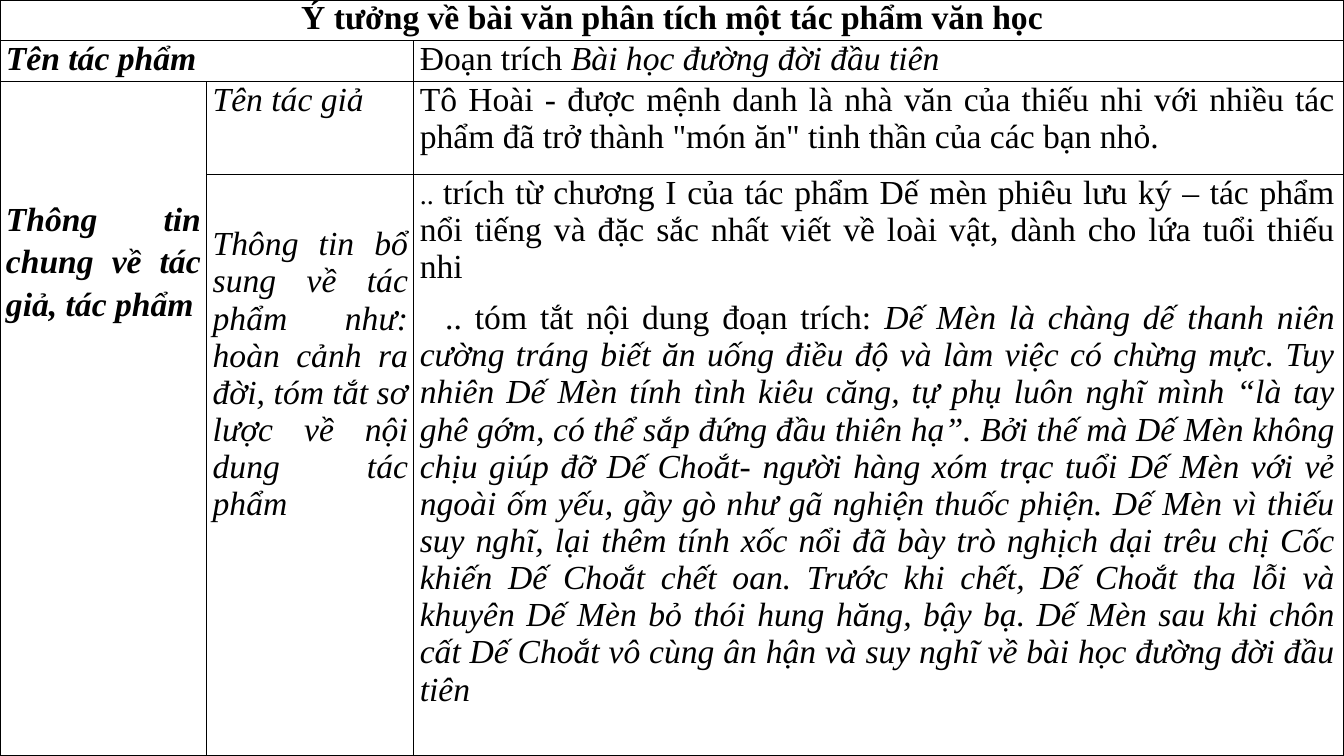
from dataclasses import dataclass

from lxml.etree import SubElement
from pptx import Presentation
from pptx.dml.color import RGBColor
from pptx.enum.text import PP_ALIGN as Align
from pptx.oxml.ns import qn
from pptx.util import Cm, Pt


@dataclass(frozen=True)
class Theme:
    """Colours, font and sizes of the slide."""
    ink: str = "000000"
    paper: str = "FFFFFF"
    font: str = "Times New Roman"
    body: int = 24
    small: int = 20
    gap: int = 10
    border: int = 1


THEME = Theme()
COLUMN_WIDTHS = (5.21, 5.22, 23.44)
ROW_HEIGHTS = (1.03, 1.03, 2.33, 14.66)
SIDE_MARGIN = 0.15
WIDE_MARGIN = 0.23

AUTHOR = ('Tô Hoài - được mệnh danh là nhà văn của thiếu nhi với nhiều tác phẩm '
          'đã trở thành "món ăn" tinh thần của các bạn nhỏ.')
EXTRA_INFO = ("Thông tin bổ sung về tác phẩm như: hoàn cảnh ra đời, "
              "tóm tắt sơ lược về nội dung tác phẩm")
ORIGIN = ("trích từ chương I của tác phẩm Dế mèn phiêu lưu ký – tác phẩm nổi tiếng "
          "và đặc sắc nhất viết về loài vật, dành cho lứa tuổi thiếu nhi")
SUMMARY = ("Dế Mèn là chàng dế thanh niên cường tráng biết ăn uống điều độ và làm việc "
           "có chừng mực. Tuy nhiên Dế Mèn tính tình kiêu căng, tự phụ luôn nghĩ mình "
           "“là tay ghê gớm, có thể sắp đứng đầu thiên hạ”. Bởi thế mà Dế Mèn không "
           "chịu giúp đỡ Dế Choắt- người hàng xóm trạc tuổi Dế Mèn với vẻ ngoài ốm yếu, "
           "gầy gò như gã nghiện thuốc phiện. Dế Mèn vì thiếu suy nghĩ, lại thêm tính "
           "xốc nổi đã bày trò nghịch dại trêu chị Cốc khiến Dế Choắt chết oan. Trước "
           "khi chết, Dế Choắt tha lỗi và khuyên Dế Mèn bỏ thói hung hăng, bậy bạ. "
           "Dế Mèn sau khi chôn cất Dế Choắt vô cùng ân hận và suy nghĩ về bài học "
           "đường đời đầu tiên")


def add_text(paragraph, text, bold=False, italic=False, size=THEME.body):
    """Append a formatted run to a paragraph."""
    run = paragraph.add_run()
    run.text = text
    font = run.font
    font.name, font.size = THEME.font, Pt(size)
    font.bold, font.italic = bold, italic
    font.color.rgb = RGBColor.from_string(THEME.ink)


def style_cell(cell):
    """Give a cell its margins, thin borders and plain fill."""
    cell.margin_left = cell.margin_right = Cm(SIDE_MARGIN)
    cell.margin_top = cell.margin_bottom = 0
    properties = cell._tc.get_or_add_tcPr()
    for side in ("a:lnL", "a:lnR", "a:lnT", "a:lnB"):
        line = SubElement(properties, qn(side), w=str(Pt(THEME.border)))
        solid = SubElement(line, qn("a:solidFill"))
        SubElement(solid, qn("a:srgbClr"), val=THEME.ink)
    cell.fill.solid()
    cell.fill.fore_color.rgb = RGBColor.from_string(THEME.paper)


def fill_cell(cell, *paragraphs, align=Align.JUSTIFY, spacing=None, top=0,
              right=SIDE_MARGIN, indents=()):
    """Write paragraphs, each a list of (text, format) pairs, into a cell."""
    cell.margin_top, cell.margin_right = Cm(top), Cm(right)
    frame = cell.text_frame
    for index, runs in enumerate(paragraphs):
        paragraph = frame.add_paragraph() if index else frame.paragraphs[0]
        paragraph.alignment = align
        paragraph.space_after = Pt(THEME.gap)
        if spacing:
            paragraph.line_spacing = spacing
        if index < len(indents):
            paragraph._p.get_or_add_pPr().set("indent", str(Cm(indents[index])))
        for text, style in runs:
            add_text(paragraph, text, **style)


def add_idea_table(slide, left, top, width, height):
    """Place the table of ideas in the given box."""
    frame = slide.shapes.add_table(len(ROW_HEIGHTS), len(COLUMN_WIDTHS),
                                   left, top, width, height)
    table = frame.table
    table.first_row = table.horz_banding = False
    for column, size in zip(table.columns, COLUMN_WIDTHS):
        column.width = Cm(size)
    for row, size in zip(table.rows, ROW_HEIGHTS):
        row.height = Cm(size)
    for cell in table.iter_cells():
        style_cell(cell)
    for first, last in (((0, 0), (0, 2)), ((1, 0), (1, 1)), ((2, 0), (3, 0))):
        table.cell(*first).merge(table.cell(*last))

    bold, italic = {"bold": True}, {"italic": True}
    heading = bold | italic
    fill_cell(table.cell(0, 0),
              [("Ý tưởng về bài văn phân tích một tác phẩm văn học", bold)],
              align=Align.CENTER)
    fill_cell(table.cell(1, 0), [("Tên tác phẩm", heading)])
    fill_cell(table.cell(1, 2),
              [("Đoạn trích ", {}), ("Bài học đường đời đầu tiên", italic)])
    fill_cell(table.cell(2, 0), [("Thông tin chung về tác giả, tác phẩm", heading)],
              spacing=1.15, top=2.87)
    fill_cell(table.cell(2, 1), [("Tên tác giả", italic)])
    fill_cell(table.cell(2, 2), [(AUTHOR, {})], right=WIDE_MARGIN)
    fill_cell(table.cell(3, 1), [(EXTRA_INFO, italic)], top=1.3)
    fill_cell(table.cell(3, 2),
              [(".. ", {"size": THEME.small}), (ORIGIN, {})],
              [(".. tóm tắt nội dung đoạn trích: ", {}), (SUMMARY, italic)],
              right=WIDE_MARGIN, indents=(0, 0.64))


def main():
    """Build and save the presentation."""
    presentation = Presentation()
    presentation.slide_width = Cm(33.87)
    presentation.slide_height = Cm(19.05)
    slide = presentation.slides.add_slide(presentation.slide_layouts[6])
    add_idea_table(slide, 0, 0, presentation.slide_width, presentation.slide_height)
    presentation.save("out.pptx")


if __name__ == "__main__":
    main()
